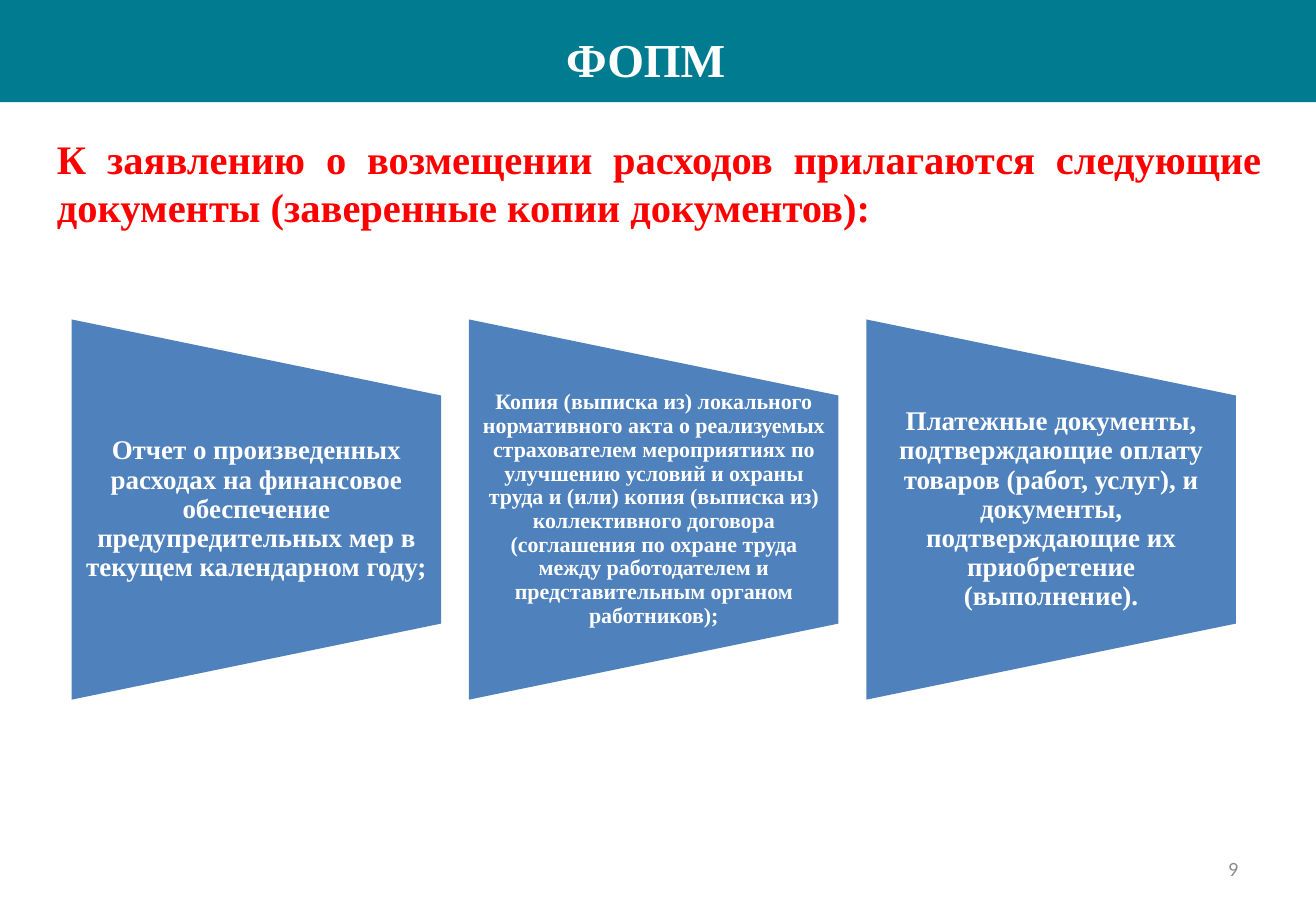
from pptx import Presentation
from pptx.dml.color import RGBColor
from pptx.enum.shapes import MSO_SHAPE
from pptx.enum.text import MSO_ANCHOR, MSO_AUTO_SIZE, PP_ALIGN
from pptx.util import Inches, Pt

TRAPEZOID = MSO_SHAPE.FLOWCHART_MANUAL_OPERATION
TOP, MIDDLE = MSO_ANCHOR.TOP, MSO_ANCHOR.MIDDLE
LEFT, CENTER, RIGHT, JUSTIFY = (PP_ALIGN.LEFT, PP_ALIGN.CENTER,
                                PP_ALIGN.RIGHT, PP_ALIGN.JUSTIFY)
NO_AUTOFIT = MSO_AUTO_SIZE.NONE
SERIF, SANS = "Times New Roman", "Calibri"
TEAL, BLUE, RED, WHITE, GRAY = "007B8F", "4F81BD", "FF0000", "FFFFFF", "8C8C8C"

# Content
TITLE = "ФОПМ"
LEAD = ("К заявлению о возмещении расходов прилагаются следующие документы "
        "(заверенные копии документов):")
DOCUMENTS = [  # text, size in points, side inset in inches
    ("Отчет о произведенных расходах на финансовое обеспечение "
     "предупредительных мер в текущем календарном году;", 16, 0.11),
    ("Копия (выписка из) локального нормативного акта о реализуемых "
     "страхователем мероприятиях по улучшению условий и охраны труда и (или) "
     "копия (выписка из) коллективного договора (соглашения по охране труда "
     "между работодателем и представительным органом работников);", 13, 0.09),
    ("Платежные документы, подтверждающие оплату товаров (работ, услуг), и "
     "документы, подтверждающие их приобретение (выполнение).", 16, 0.11),
]
PAGE = "9"

# Grid, in inches
SLIDE_W, SLIDE_H = 10.83, 7.5
BAND_H = 0.84
CARD_X, CARD_Y, CARD_PITCH = 0.59, 2.63, 3.27
CARD_W, CARD_H = 3.04, 3.13
LABEL_H = CARD_H * 0.6


def rgb(color):
    return RGBColor.from_string(color)


def write(s, text, size, color, align, anchor=TOP, font=SERIF, bold=True):
    tf = s.text_frame
    tf.text = text
    tf.word_wrap = True
    tf.auto_size = NO_AUTOFIT
    tf.vertical_anchor = anchor
    p = tf.paragraphs[0]
    p.alignment = align
    f = p.runs[0].font
    f.name, f.size, f.bold = font, Pt(size), bold
    f.color.rgb = rgb(color)
    return tf


def add_text(slide, x, y, w, h, *args, **style):
    s = slide.shapes.add_textbox(Inches(x), Inches(y), Inches(w), Inches(h))
    return write(s, *args, **style)


def add_card(slide, column, text, size, inset):
    x = CARD_X + column * CARD_PITCH
    # The trapezoid is turned on its side, so its width and height swap
    shift = (CARD_W - CARD_H) / 2
    s = slide.shapes.add_shape(TRAPEZOID, Inches(x + shift), Inches(CARD_Y - shift),
                               Inches(CARD_H), Inches(CARD_W))
    s.rotation = 270
    s.shadow.inherit = False
    s.fill.solid()
    s.fill.fore_color.rgb = rgb(BLUE)
    s.line.fill.background()
    tf = add_text(slide, x, CARD_Y + (CARD_H - LABEL_H) / 2, CARD_W, LABEL_H,
                  text, size, WHITE, CENTER, anchor=MIDDLE)
    tf.margin_left = tf.margin_right = Inches(inset)
    tf.margin_top = tf.margin_bottom = 0
    tf.paragraphs[0].line_spacing = 0.9


def main():
    prs = Presentation()
    prs.slide_width, prs.slide_height = Inches(SLIDE_W), Inches(SLIDE_H)
    slide = prs.slides.add_slide(prs.slide_layouts[5])

    # Title band
    title = slide.shapes.title
    title.left = title.top = 0
    title.width, title.height = Inches(SLIDE_W), Inches(BAND_H)
    title.fill.solid()
    title.fill.fore_color.rgb = rgb(TEAL)
    tf = write(title, TITLE, 28, WHITE, LEFT)
    tf.margin_left, tf.margin_top = Inches(4.66), Inches(0.25)

    # Lead sentence and document cards
    add_text(slide, 0.37, 1.05, 10.11, 0.91, LEAD, 24, RED, JUSTIFY)
    for column, document in enumerate(DOCUMENTS):
        add_card(slide, column, *document)

    # Page number
    add_text(slide, 7.76, 6.95, 2.53, 0.4, PAGE, 12, GRAY, RIGHT,
             anchor=MIDDLE, font=SANS, bold=False)

    prs.save("out.pptx")


if __name__ == "__main__":
    main()
